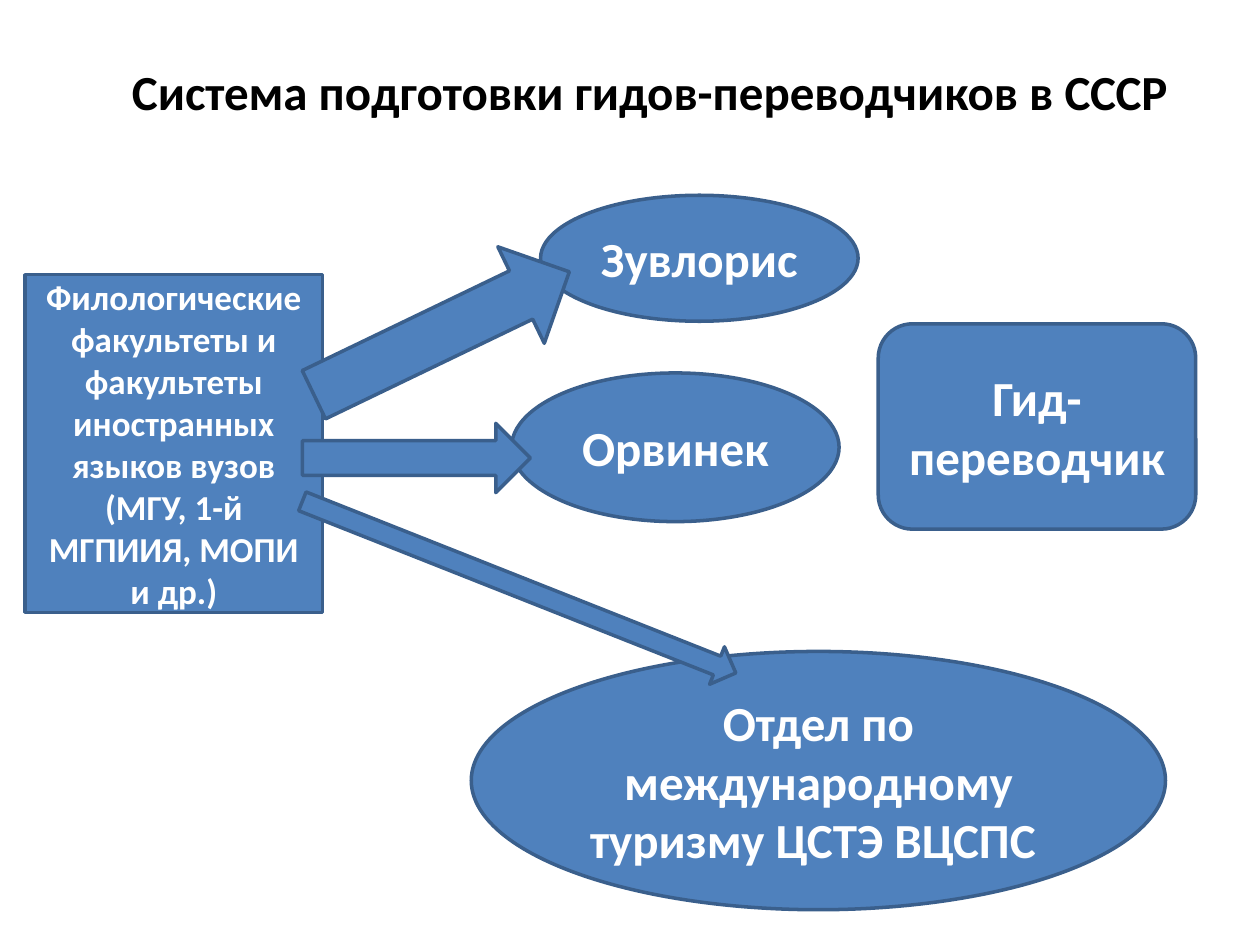
import pptx
import pptx.util
import pptx.dml.color
import pptx.enum.shapes
import pptx.enum.text

Inches, Pt = pptx.util.Inches, pptx.util.Pt
RGBColor = pptx.dml.color.RGBColor
SHAPE = pptx.enum.shapes.MSO_SHAPE
CENTER = pptx.enum.text.PP_ALIGN.CENTER
MIDDLE = pptx.enum.text.MSO_ANCHOR.MIDDLE

BLACK = RGBColor(0x00, 0x00, 0x00)
WHITE = RGBColor(0xFF, 0xFF, 0xFF)
BLUE = RGBColor(0x4F, 0x81, 0xBD)
DARK_BLUE = RGBColor(0x3A, 0x5F, 0x8C)

FACULTIES = (
    "Филологические факультеты и факультеты иностранных языков вузов",
    "(МГУ, 1-й МГПИИЯ, МОПИ и др.)",
)
AGENCIES = (
    ("Зувлорис", (4.29, 1.55, 2.52, 1)),
    ("Орвинек", (4.06, 2.96, 2.6, 1.18)),
    ("Отдел по международному туризму ЦСТЭ ВЦСПС ", (3.74, 5.17, 5.51, 2.05)),
)
# Box before rotation, then rotation in degrees
ARROWS = (
    ((2.27, 4.5, 3.7, 0.32), 21.6),
    ((2.38, 2.22, 2.25, 0.85), 334.3),
    ((2.4, 3.36, 1.81, 0.55), 0),
)


def write(tf, lines, size, color):
    """Fill a text frame with centred bold paragraphs."""
    tf.word_wrap = True
    font = {"name": "Calibri", "size": Pt(size), "bold": True}
    for i, line in enumerate(lines):
        p = tf.add_paragraph() if i else tf.paragraphs[0]
        p.alignment = CENTER
        r = p.add_run()
        r.text = line
        for key, value in font.items():
            setattr(r.font, key, value)
        r.font.color.rgb = color


def add_title(s, text, box):
    """Use the subtitle placeholder as heading and drop the empty title."""
    title = s.shapes.title
    title.element.getparent().remove(title.element)
    sp = s.placeholders[1]
    sp.left, sp.top, sp.width, sp.height = map(Inches, box)
    write(sp.text_frame, [text], 28, BLACK)


def add_block(s, kind, box, lines=(), size=28):
    sp = s.shapes.add_shape(kind, *map(Inches, box))
    sp.shadow.inherit = False
    sp.fill.solid()
    sp.fill.fore_color.rgb = BLUE
    sp.line.color.rgb = DARK_BLUE
    sp.line.width = Pt(2)
    sp.text_frame.vertical_anchor = MIDDLE
    write(sp.text_frame, lines, size, WHITE)
    return sp


def add_scheme(s):
    """Faculties on the left, agencies in the middle, guide on the right."""
    add_block(s, SHAPE.RECTANGLE, (0.2, 2.18, 2.36, 2.68), FACULTIES, 20)
    for name, box in AGENCIES:
        add_block(s, SHAPE.OVAL, box, [name])
    for box, angle in ARROWS:
        add_block(s, SHAPE.RIGHT_ARROW, box).rotation = angle
    add_block(s, SHAPE.ROUNDED_RECTANGLE, (6.97, 2.57, 2.52, 1.63),
              ["Гид-переводчик"])


def main():
    prs = pptx.Presentation()
    prs.slide_width, prs.slide_height = Inches(10), Inches(7.5)
    s = prs.slides.add_slide(prs.slide_layouts[0])
    add_title(s, "Система подготовки гидов-переводчиков в СССР",
              (0.51, 0.44, 9.29, 6.54))
    add_scheme(s)
    prs.save("out.pptx")


if __name__ == "__main__":
    main()
